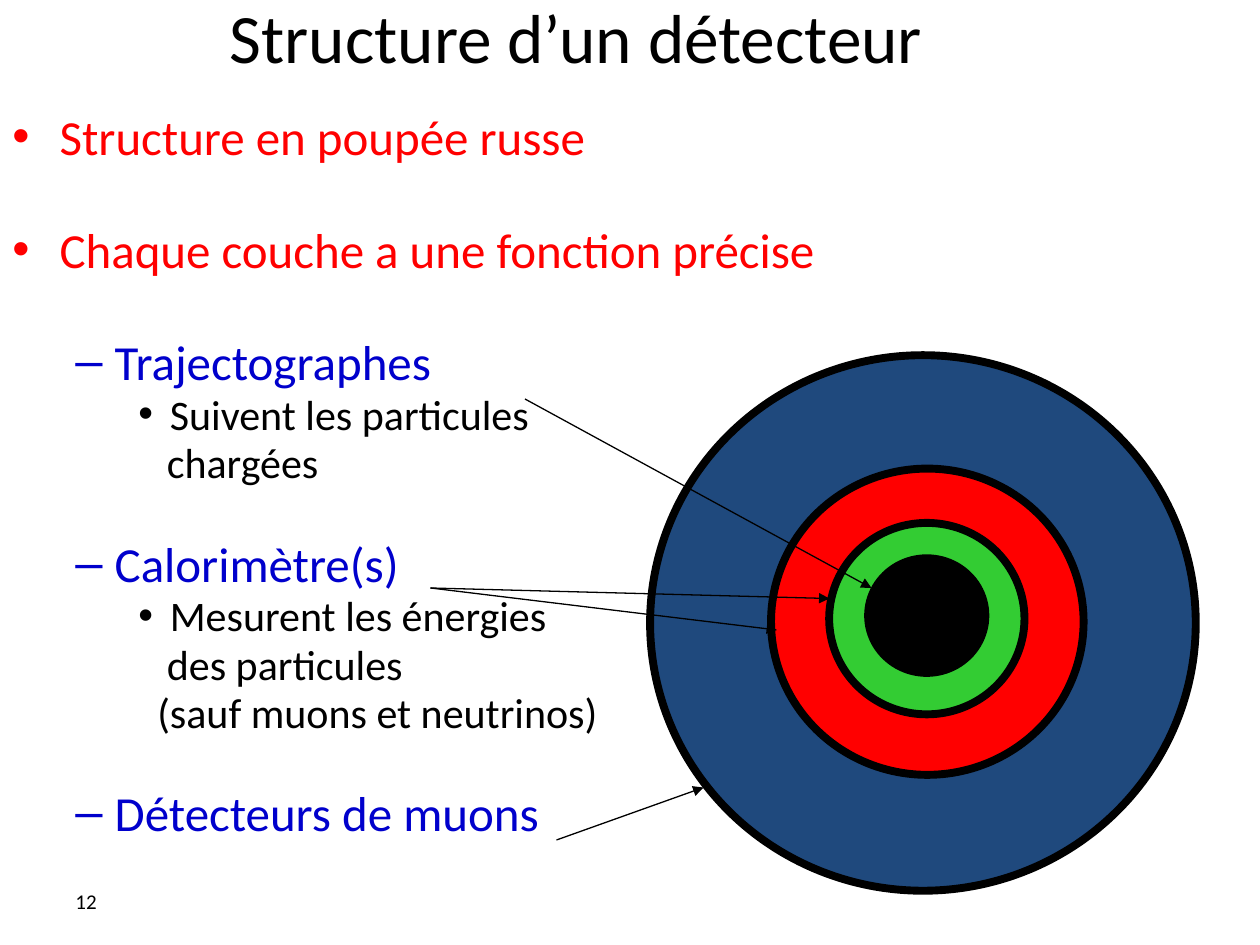
from dataclasses import dataclass

from lxml import etree
from pptx import Presentation
from pptx.dml.color import RGBColor
from pptx.enum.shapes import MSO_CONNECTOR, MSO_SHAPE
from pptx.enum.text import MSO_ANCHOR, PP_ALIGN
from pptx.oxml.ns import qn
from pptx.slide import Slide
from pptx.text.text import TextFrame
from pptx.util import Pt

ELLIPSE = MSO_SHAPE.OVAL
STRAIGHT = MSO_CONNECTOR.STRAIGHT
TOP, MIDDLE = MSO_ANCHOR.TOP, MSO_ANCHOR.MIDDLE
LEFT, CENTER = PP_ALIGN.LEFT, PP_ALIGN.CENTER


@dataclass(frozen=True)
class Theme:
    font: str = "Calibri"
    black: str = "000000"
    red: str = "FF0000"
    blue: str = "0000CC"
    navy: str = "1F497D"
    green: str = "33CC33"
    title_size: float = 39.6
    heading_size: float = 28
    detail_size: float = 24
    number_size: float = 12
    ring_line: float = 4.5
    arrow_line: float = 0.75


THEME = Theme()


@dataclass(frozen=True)
class Level:
    size: float
    color: str
    margin: float
    indent: float
    before: float
    bullet: str = ""


@dataclass(frozen=True)
class Item:
    text: str
    level: Level
    gap: float = 0


@dataclass(frozen=True)
class Ring:
    left: float
    top: float
    width: float
    height: float
    color: str


@dataclass(frozen=True)
class Arrow:
    start: tuple[float, float]
    end: tuple[float, float]


TOPIC = Level(THEME.heading_size, THEME.red, 27, -27, 5, "•")
LAYER = Level(THEME.heading_size, THEME.blue, 58.5, -22.5, 5, "–")
ROLE = Level(THEME.detail_size, THEME.black, 90, -18, 4.6, "•")
ROLE_MORE = Level(THEME.detail_size, THEME.black, 88.3, 0, 4.6)
ROLE_NOTE = Level(THEME.detail_size, THEME.black, 82.8, 0, 4.6)

HEADING_GAP, DETAIL_GAP = 32.3, 28

ITEMS = [
    Item("Structure en poupée russe", TOPIC),
    Item("Chaque couche a une fonction précise", TOPIC, HEADING_GAP),
    Item("Trajectographes", LAYER, HEADING_GAP),
    Item("Suivent les particules", ROLE),
    Item("chargées", ROLE_MORE),
    Item("Calorimètre(s)", LAYER, DETAIL_GAP),
    Item("Mesurent les énergies", ROLE),
    Item("des particules", ROLE_MORE),
    Item("(sauf muons et neutrinos)", ROLE_NOTE),
    Item("Détecteurs de muons", LAYER, DETAIL_GAP),
]

RINGS = [
    Ring(371.5, 203, 311.8, 306, THEME.navy),
    Ring(440.6, 267.8, 178.6, 175, THEME.red),
    Ring(473.8, 298.8, 111.6, 109.4, THEME.green),
    Ring(496.1, 319, 67, 65.5, THEME.black),
]

ARROWS = [
    Arrow((300, 228), (498, 336)),
    Arrow((246, 336), (474, 342)),
    Arrow((246, 336), (444, 360)),
    Arrow((318, 480), (402, 450)),
]


def add_box(page: Slide, left: float, top: float, width: float,
            height: float, anchor: MSO_ANCHOR) -> TextFrame:
    box = page.shapes.add_textbox(Pt(left), Pt(top), Pt(width), Pt(height))
    frame = box.text_frame
    frame.word_wrap = True
    frame.vertical_anchor = anchor
    return frame


def write(frame: TextFrame, text: str, *, size: float, color: str = THEME.black,
          align: PP_ALIGN = LEFT, bullet: str = "", margin: float = 0,
          indent: float = 0, before: float = 0, spacing: float = 1.0) -> None:
    first = not frame.text
    para = frame.paragraphs[0] if first else frame.add_paragraph()
    para.alignment = align
    para.line_spacing = spacing
    para.space_before = Pt(0 if first else before)
    properties = para._p.get_or_add_pPr()
    properties.set("marL", str(Pt(margin)))
    properties.set("indent", str(Pt(indent)))
    if bullet:
        etree.SubElement(properties, qn("a:buFont"), typeface="Arial")
        etree.SubElement(properties, qn("a:buChar"), char=bullet)
    span = para.add_run()
    span.text = text
    span.font.name = THEME.font
    span.font.size = Pt(size)
    span.font.color.rgb = RGBColor.from_string(color)


def add_ring(page: Slide, ring: Ring) -> None:
    shape = page.shapes.add_shape(
        ELLIPSE, Pt(ring.left), Pt(ring.top), Pt(ring.width), Pt(ring.height))
    shape.shadow.inherit = False
    shape.fill.solid()
    shape.fill.fore_color.rgb = RGBColor.from_string(ring.color)
    shape.line.color.rgb = RGBColor.from_string(THEME.black)
    shape.line.width = Pt(THEME.ring_line)


def add_arrow(page: Slide, arrow: Arrow) -> None:
    points = [Pt(value) for value in arrow.start + arrow.end]
    connector = page.shapes.add_connector(STRAIGHT, *points)
    connector.line.color.rgb = RGBColor.from_string(THEME.black)
    connector.line.width = Pt(THEME.arrow_line)
    outline = connector.line._get_or_add_ln()
    etree.SubElement(outline, qn("a:tailEnd"), type="triangle")
    etree.SubElement(connector._element.spPr, qn("a:effectLst"))


def main() -> None:
    deck = Presentation()
    deck.slide_width, deck.slide_height = Pt(720), Pt(540)
    page = deck.slides.add_slide(deck.slide_layouts[6])

    write(add_box(page, 36, 500.5, 168, 28.8, MIDDLE), "12", size=THEME.number_size)
    write(add_box(page, 96, 0, 466.5, 41, MIDDLE), "Structure d’un détecteur",
          size=THEME.title_size, align=CENTER)

    body = add_box(page, 0, 64, 618, 440, TOP)
    for item in ITEMS:
        level = item.level
        write(body, item.text, size=level.size, color=level.color,
              bullet=level.bullet, margin=level.margin, indent=level.indent,
              before=level.before + item.gap, spacing=0.8)

    for ring in RINGS:
        add_ring(page, ring)
    for arrow in ARROWS:
        add_arrow(page, arrow)

    deck.save("out.pptx")


if __name__ == "__main__":
    main()
